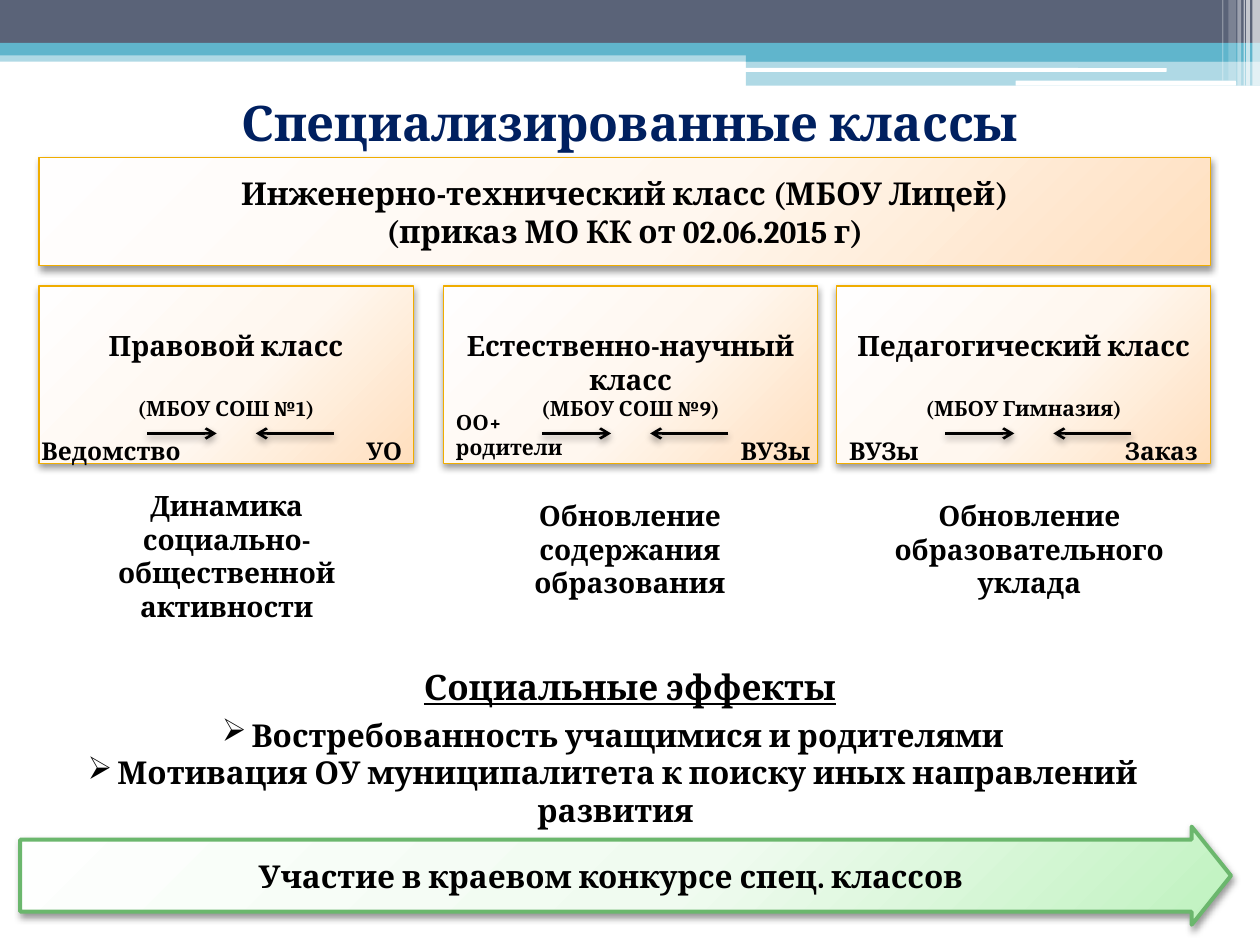
from lxml import etree
from pptx import Presentation
from pptx.dml.color import RGBColor
from pptx.enum import shapes, text
from pptx.oxml import parse_xml
from pptx.oxml.ns import nsdecls, qn
from pptx.util import Inches, Pt

FONT = "Cambria"
COLORS = {"slate": "5A6378", "teal": "60B5CC", "white": "FFFFFF", "navy": "002060",
          "black": "000000", "gold": "F0AD00", "green": "6BB76D"}
ORANGE_STOPS = [(0, "FFFEFE"), (55, "FFF7EF"), (100, "FFDFBE")]
GREEN_STOPS = [(0, "FEFFFE"), (55, "F0FBF0"), (100, "BFF2BF")]

# Header bands: left, top, width, height, colour, opacity %
BANDS = [
    (0, 0.4, 10, 0.09, "teal", 50), (0, 0, 10, 0.34, "slate", 100),
    (0, 0.34, 10, 0.1, "teal", 100), (5.92, 0.39, 4.08, 0.1, "teal", 100),
    (5.92, 0.48, 4.08, 0.2, "teal", 50),
]
ROUNDED_BANDS = [(5.91, 0.54, 3.35, 0.03, "white", 100), (8.06, 0.64, 1.75, 0.04, "white", 100)]
# Light stripes at the right edge: left, width, height, opacity %
STRIPES = [(9.94, 0.06, 0.68, 65), (9.89, 0.03, 0.68, 65), (9.87, 0.01, 0.68, 60),
           (9.82, 0.03, 0.68, 40), (9.75, 0.06, 0.64, 20), (9.7, 0.01, 0.64, 30)]

TITLE = "Специализированные классы"
MAIN_CLASS = ["Инженерно-технический класс (МБОУ Лицей)", "(приказ МО КК от 02.06.2015 г)"]
# Partners: left, top, width, size, lines; results: left, top, width, height, lines
CLASSES = [
    {"left": 0.31, "name": "Правовой класс", "school": "(МБОУ СОШ №1)", "gap": 19,
     "arrows": 1.17,
     "partners": [(0.23, 3.41, 1.64, 14, ["Ведомство"]), (2.81, 3.41, 0.63, 14, ["УО"])],
     "result": (0.47, 3.83, 2.66, 1.18, ["Динамика", "социально-общественной активности"])},
    {"left": 3.52, "name": "Естественно-научный класс", "school": "(МБОУ СОШ №9)", "gap": 0,
     "arrows": 4.3,
     "partners": [(3.52, 3.2, 1.41, 12, ["ОО+", "родители"]), (5.78, 3.41, 1.02, 14, ["ВУЗы"])],
     "result": (3.67, 3.91, 2.66, 0.91, ["Обновление содержания образования"])},
    {"left": 6.64, "name": "Педагогический класс", "school": "(МБОУ Гимназия)", "gap": 19,
     "arrows": 7.5,
     "partners": [(6.64, 3.41, 1.02, 14, ["ВУЗы"]), (8.83, 3.41, 1.02, 14, ["Заказ"])],
     "result": (6.88, 3.91, 2.58, 0.91, ["Обновление образовательного уклада"])},
]
EFFECTS_TITLE = "Социальные эффекты"
EFFECTS = ["Востребованность учащимися и родителями",
           "Мотивация ОУ муниципалитета к поиску иных направлений развития"]
CONTEST = "Участие в краевом конкурсе спец. классов"

presentation = Presentation()
presentation.slide_width, presentation.slide_height = Inches(10), Inches(7.5)
slide = presentation.slides.add_slide(presentation.slide_layouts[6])


def rgb(name):
    return RGBColor.from_string(COLORS[name])


def write(shape, lines, size, color="black", centered=True, middle=False):
    frame = shape.text_frame
    frame.word_wrap = True
    frame.vertical_anchor = text.MSO_ANCHOR.MIDDLE if middle else text.MSO_ANCHOR.TOP
    frame.text = "\n".join(lines)
    for paragraph in frame.paragraphs:
        paragraph.alignment = text.PP_ALIGN.CENTER if centered else text.PP_ALIGN.LEFT
        for run in paragraph.runs:
            font = run.font
            font.name, font.size, font.bold = FONT, Pt(size), True
            font.color.rgb = rgb(color)
    return frame.paragraphs


def add_text(left, top, width, height, lines, size, **style):
    box = slide.shapes.add_textbox(*map(Inches, (left, top, width, height)))
    return write(box, lines, size, **style)


def add_band(kind, left, top, width, height, color, opacity):
    band = slide.shapes.add_shape(kind, *map(Inches, (left, top, width, height)))
    band.shadow.inherit = False
    band.fill.solid()
    band.fill.fore_color.rgb = rgb(color)
    band.line.fill.background()
    if opacity < 100:
        fill_color = band.fill._xPr.find(qn("a:solidFill"))[0]
        etree.SubElement(fill_color, qn("a:alpha"), val=str(opacity * 1000))


def add_shadow(shape):
    properties = shape._element.spPr
    for old in properties.findall(qn("a:effectLst")):
        properties.remove(old)
    properties.append(parse_xml(
        f'<a:effectLst {nsdecls("a")}><a:outerShdw blurRad="{Pt(4.1)}" dist="{Pt(2)}" '
        f'dir="5400000" rotWithShape="0"><a:srgbClr val="{COLORS["black"]}">'
        '<a:alpha val="40000"/></a:srgbClr></a:outerShdw></a:effectLst>'))


def add_panel(kind, left, top, width, height, stops, line, line_width):
    panel = slide.shapes.add_shape(kind, *map(Inches, (left, top, width, height)))
    panel.line.color.rgb = rgb(line)
    panel.line.width = Pt(line_width)
    stop_xml = "".join(f'<a:gs pos="{position * 1000}"><a:srgbClr val="{color}"/></a:gs>'
                       for position, color in stops)
    panel._element.spPr.find(qn("a:prstGeom")).addnext(parse_xml(
        f'<a:gradFill {nsdecls("a")} rotWithShape="1"><a:gsLst>{stop_xml}</a:gsLst>'
        '<a:path path="circle"><a:fillToRect l="-40000" t="-90000" r="140000" b="190000"/>'
        '</a:path></a:gradFill>'))
    add_shadow(panel)
    return panel


def add_arrow(start, end, y):
    arrow = slide.shapes.add_connector(shapes.MSO_CONNECTOR.STRAIGHT,
                                       *map(Inches, (start, y, end, y)))
    arrow.line.color.rgb = rgb("black")
    arrow.line.width = Pt(1.5)
    etree.SubElement(arrow.line._get_or_add_ln(), qn("a:tailEnd"), type="arrow")
    add_shadow(arrow)


# Header decoration
RECTANGLE = shapes.MSO_SHAPE.RECTANGLE
for band in BANDS:
    add_band(RECTANGLE, *band)
for band in ROUNDED_BANDS:
    add_band(shapes.MSO_SHAPE.ROUNDED_RECTANGLE, *band)
for left, width, height, opacity in STRIPES:
    add_band(RECTANGLE, left, 0, width, height, "white", opacity)

# Title and main class
add_text(0, 0.62, 10, 0.7, [TITLE], 28, color="navy", middle=True)
main_panel = add_panel(RECTANGLE, 0.31, 1.25, 9.3, 0.86, ORANGE_STOPS, "gold", 0.75)
write(main_panel, MAIN_CLASS, 18, middle=True)

# Three class cards with partners, arrows and results
for item in CLASSES:
    card = add_panel(RECTANGLE, item["left"], 2.27, 2.97, 1.41, ORANGE_STOPS, "gold", 0.75)
    name, school = write(card, [item["name"], item["school"]], 16, middle=True)
    school.space_before = Pt(item["gap"])
    school.runs[0].font.size = Pt(12)
    for left, top, width, size, lines in item["partners"]:
        add_text(left, top, width, 0.34 * len(lines), lines, size, centered=False)
    start = item["arrows"]
    add_arrow(start, start + 0.55, 3.44)
    add_arrow(start + 1.48, start + 0.86, 3.44)
    add_text(*item["result"], 16)

# Social effects
heading, = add_text(0, 5.23, 10, 0.44, [EFFECTS_TITLE], 20)
heading.runs[0].font.underline = True
for paragraph in add_text(0.47, 5.63, 8.83, 1.01, EFFECTS, 18):
    etree.SubElement(paragraph._p.get_or_add_pPr(), qn("a:buChar"), char="➢")

# Contest arrow
contest = add_panel(shapes.MSO_SHAPE.RIGHT_ARROW, 0.16, 6.56, 9.61, 0.78,
                    GREEN_STOPS, "green", 2.25)
contest.adjustments[0], contest.adjustments[1] = 0.733, 0.4
write(contest, [CONTEST], 18, middle=True)

presentation.save("out.pptx")
